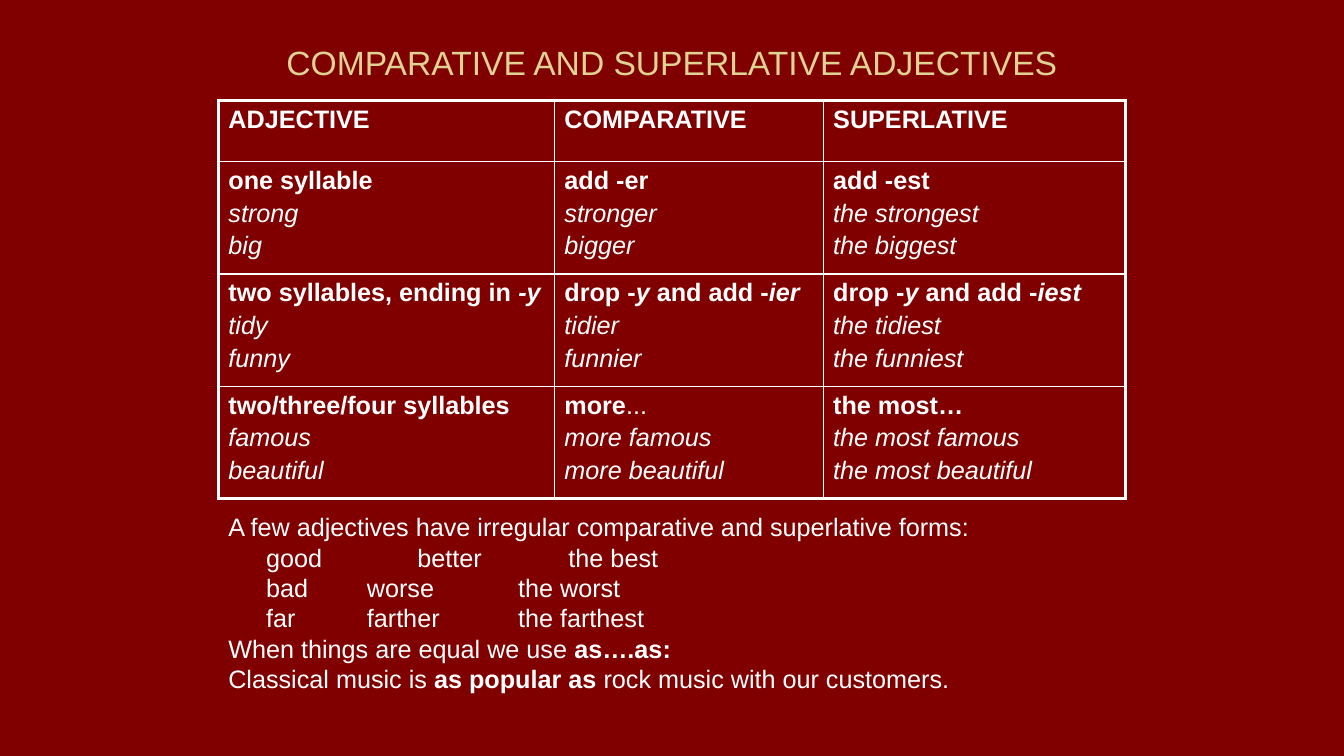
from lxml.etree import SubElement
from pptx import Presentation
from pptx.dml.color import RGBColor
from pptx.enum.text import MSO_ANCHOR, PP_ALIGN
from pptx.oxml.ns import qn
from pptx.util import Emu, Pt

COLORS = {"background": "800000", "title": "DFD293", "text": "FFFFFF"}
PIXEL = 9525
THICK, THIN = 2.25, 1

COLUMN_WIDTHS = [320, 256, 288]
ROW_HEIGHTS = [58, 107, 107, 107]
BOLD, ITALIC, BOTH = "b", "i", "bi"


def rule_cell(rule, *examples):
    return [rule, *([(example, ITALIC)] for example in examples)]


HEADINGS = [[[(name, BOLD)]] for name in ("ADJECTIVE", "COMPARATIVE", "SUPERLATIVE")]
RULES = [
    HEADINGS,
    [
        rule_cell([("one syllable", BOLD)], "strong", "big"),
        rule_cell([("add -er", BOLD)], "stronger", "bigger"),
        rule_cell([("add -est", BOLD)], "the strongest", "the biggest"),
    ],
    [
        rule_cell([("two syllables, ending in ", BOLD), ("-y", BOTH)], "tidy", "funny"),
        rule_cell([("drop -", BOLD), ("y", BOTH), (" and add -", BOLD), ("ier", BOTH)],
                  "tidier", "funnier"),
        rule_cell([("drop -", BOLD), ("y", BOTH), (" and add -", BOLD), ("iest", BOTH)],
                  "the tidiest", "the funniest"),
    ],
    [
        rule_cell([("two/three/four syllables", BOLD)], "famous", "beautiful"),
        rule_cell([("more", BOLD), ("...", "")], "more famous", "more beautiful"),
        rule_cell([("the most…", BOLD)], "the most famous", "the most beautiful"),
    ],
]
IRREGULAR = [
    ("good", "better", "the best"),
    ("bad", "worse", "the worst"),
    ("far", "farther", "the farthest"),
]
NOTES = [
    [("A few adjectives have irregular comparative and superlative forms:", "")],
    *([("\t" + "\t\t".join(forms), "")] for forms in IRREGULAR),
    [("When things are equal we use ", ""), ("as….as:", BOLD)],
    [("Classical music is ", ""), ("as popular as", BOLD),
     (" rock music with our customers.", "")],
]


class GrammarSlide:
    font = "Arial"

    def __init__(self, deck):
        self.page = deck.slides.add_slide(deck.slide_layouts[6])
        fill = self.page.background.fill
        fill.solid()
        fill.fore_color.rgb = RGBColor.from_string(COLORS["background"])

    def px(self, length):
        return Emu(length * PIXEL)

    def fill_lines(self, frame, lines, size=18, color="text", gap=3.2):
        for index, spans in enumerate(lines):
            para = frame.add_paragraph() if index else frame.paragraphs[0]
            if index:
                para.space_before = Pt(gap)
            for text, style in spans:
                span = para.add_run()
                span.text = text
                span.font.name = self.font
                span.font.size = Pt(size)
                span.font.bold = "b" in style
                span.font.italic = "i" in style
                span.font.color.rgb = RGBColor.from_string(COLORS[color])

    def text(self, left, top, width, height, lines, **style):
        box = self.page.shapes.add_textbox(*map(self.px, (left, top, width, height)))
        box.text_frame.word_wrap = True
        self.fill_lines(box.text_frame, lines, **style)
        return box.text_frame

    def title(self, left, top, width, height, text):
        frame = self.text(left, top, width, height, [[(text, "")]], size=24, color="title")
        frame.vertical_anchor = MSO_ANCHOR.MIDDLE
        frame.paragraphs[0].alignment = PP_ALIGN.CENTER

    def notes(self, left, top, width, height, lines):
        frame = self.text(left, top, width, height, lines, gap=4.4)
        for para in frame.paragraphs:
            para.line_spacing = 0.8
            properties = para._p.get_or_add_pPr()
            properties.set("marL", str(self.px(36)))
            properties.set("indent", str(self.px(-36)))

    def border(self, cell, side, weight):
        line = SubElement(cell._tc.get_or_add_tcPr(), qn(f"a:ln{side}"), w=str(Pt(weight)))
        fill = SubElement(line, qn("a:solidFill"))
        SubElement(fill, qn("a:srgbClr"), val=COLORS["text"])

    def table(self, left, top, widths, heights, rows):
        bounds = map(self.px, (left, top, sum(widths), sum(heights)))
        grid = self.page.shapes.add_table(len(heights), len(widths), *bounds).table
        grid.first_row = False
        grid.horz_banding = False
        for column, width in zip(grid.columns, widths):
            column.width = self.px(width)
        for row, height in zip(grid.rows, heights):
            row.height = self.px(height)
        last_row, last_column = len(heights) - 1, len(widths) - 1
        for row, contents in enumerate(rows):
            for column, lines in enumerate(contents):
                cell = grid.cell(row, column)
                self.fill_lines(cell.text_frame, lines)
                outer = {"L": column == 0, "R": column == last_column,
                         "T": row == 0, "B": row == last_row}
                for side, is_outer in outer.items():
                    self.border(cell, side, THICK if is_outer else THIN)
                cell.fill.background()


def main():
    deck = Presentation()
    deck.slide_width = Emu(1280 * PIXEL)
    deck.slide_height = Emu(720 * PIXEL)
    slide = GrammarSlide(deck)
    slide.title(208, 29, 864, 60, "COMPARATIVE AND SUPERLATIVE ADJECTIVES")
    slide.notes(208, 488, 864, 184, NOTES)
    slide.table(208, 96, COLUMN_WIDTHS, ROW_HEIGHTS, RULES)
    deck.save("out.pptx")


if __name__ == "__main__":
    main()
